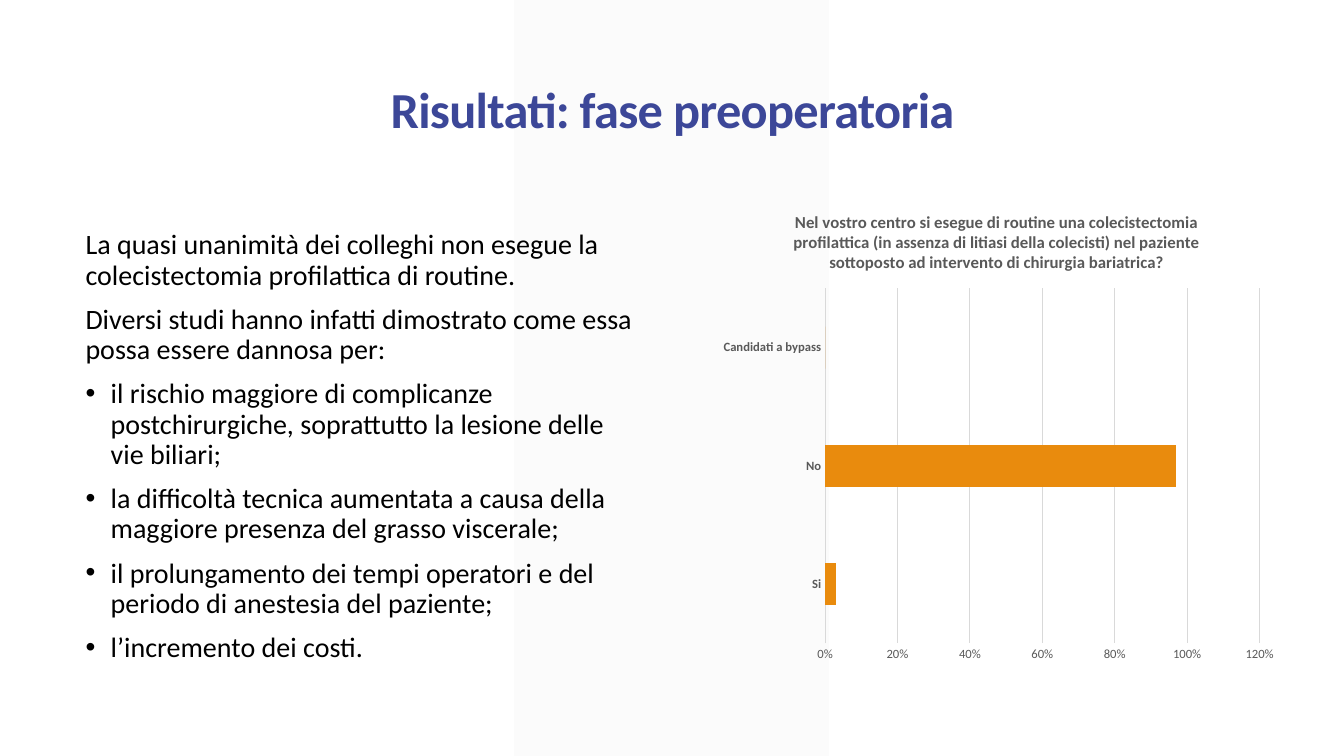
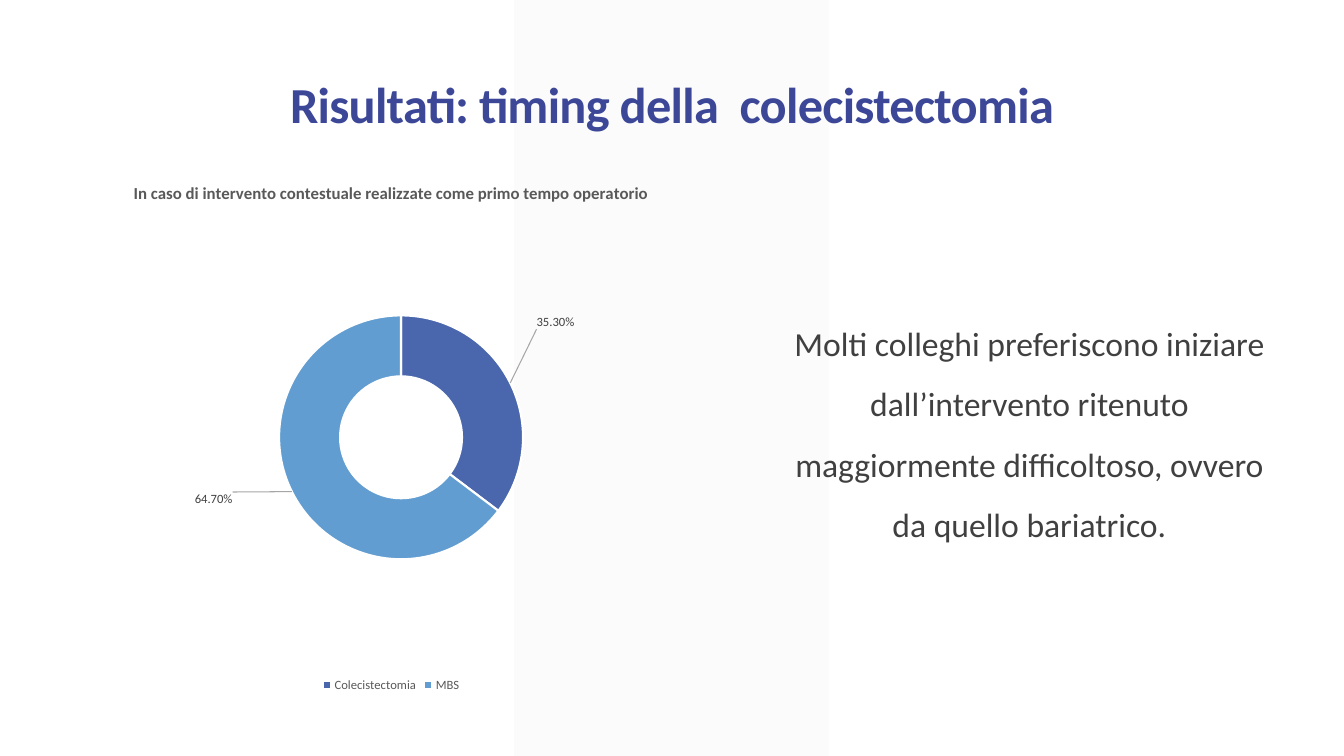
from copy import deepcopy
from dataclasses import dataclass

from lxml import etree
from pptx import Presentation
from pptx.chart.data import CategoryChartData
from pptx.dml.color import RGBColor
from pptx.enum.chart import XL_CHART_TYPE, XL_LEGEND_POSITION, XL_TICK_MARK
from pptx.enum.shapes import MSO_SHAPE
from pptx.enum.text import MSO_ANCHOR, PP_ALIGN
from pptx.oxml.ns import qn
from pptx.util import Inches, Pt

BAR, DOUGHNUT = XL_CHART_TYPE.BAR_CLUSTERED, XL_CHART_TYPE.DOUGHNUT
NO_TICK = XL_TICK_MARK.NONE
LEGEND_BOTTOM = XL_LEGEND_POSITION.BOTTOM
PARALLELOGRAM = MSO_SHAPE.PARALLELOGRAM
TOP, MIDDLE, BOTTOM = MSO_ANCHOR.TOP, MSO_ANCHOR.MIDDLE, MSO_ANCHOR.BOTTOM
LEFT, CENTER = PP_ALIGN.LEFT, PP_ALIGN.CENTER

FONT = "Calibri"
TITLE_BLUE, BLACK, DARK_GREY, MID_GREY = "3C4798", "000000", "404040", "595959"
GRID_GREY, LEADER_GREY, BAND_GREY, WHITE = "D9D9D9", "A6A6A6", "F2F2F2", "FFFFFF"
ORANGE, BLUE, LIGHT_BLUE = "E98B0D", "4A66AC", "629DD1"


@dataclass
class Box:
    left: float
    top: float
    width: float
    height: float

    def inches(self) -> tuple:
        return tuple(Inches(v) for v in (self.left, self.top, self.width, self.height))


@dataclass
class TextStyle:
    size: float
    color: str
    bold: bool = False
    align: PP_ALIGN = LEFT
    anchor: MSO_ANCHOR = TOP
    line_spacing: float = 0.9
    space_before: float = 0
    tracking: float = 0


@dataclass
class Line:
    text: str
    bullet: bool = False


@dataclass
class ChartSpec:
    kind: XL_CHART_TYPE
    box: Box
    title: str
    values: dict
    plot: Box  # fractions of the chart area


def rgb(hex_color: str) -> RGBColor:
    return RGBColor.from_string(hex_color)


def style_font(font, size: float, color: str, bold: bool = False) -> None:
    font.name, font.size, font.bold = FONT, Pt(size), bold
    font.color.rgb = rgb(color)


def sub(parent, tag: str, **attributes: str):
    return etree.SubElement(parent, qn(tag), attributes)


def add_text(slide, box: Box, lines: list[Line], style: TextStyle) -> None:
    frame = slide.shapes.add_textbox(*box.inches()).text_frame
    frame.word_wrap = True
    frame.vertical_anchor = style.anchor
    for i, line in enumerate(lines):
        paragraph = frame.add_paragraph() if i else frame.paragraphs[0]
        paragraph.text = line.text
        paragraph.alignment = style.align
        paragraph.line_spacing = style.line_spacing
        if i:
            paragraph.space_before = Pt(style.space_before)
        if line.bullet:
            properties = paragraph._p.get_or_add_pPr()
            properties.set("marL", str(Inches(0.25)))
            properties.set("indent", str(-Inches(0.25)))
            sub(properties, "a:buFont", typeface="Arial")
            sub(properties, "a:buChar", char="•")
        for run in paragraph.runs:
            style_font(run.font, style.size, style.color, style.bold)
            if style.tracking:
                run._r.get_or_add_rPr().set("spc", str(int(style.tracking * 100)))


def add_slide(deck, title: str, title_box: Box, anchor: MSO_ANCHOR):
    """Blank slide with the pale vertical band and the title."""
    slide = deck.slides.add_slide(deck.slide_layouts[6])
    band = slide.shapes.add_shape(PARALLELOGRAM, *Box(5.1, 0, 3.12, 7.5).inches())
    band.adjustments[0] = 0
    band.shadow.inherit = False
    band.fill.solid()
    band.fill.fore_color.rgb = rgb(BAND_GREY)
    band.line.fill.background()
    sub(band._element.spPr.find(f".//{qn('a:srgbClr')}"), "a:alpha", val="30000")
    add_text(slide, title_box, [Line(title)],
             TextStyle(36, TITLE_BLUE, True, CENTER, anchor, tracking=-0.5))
    return slide


def set_layout(layout, mode_tags: dict, **numbers: float) -> None:
    manual = sub(layout, "c:manualLayout")
    for tag, value in mode_tags.items():
        sub(manual, f"c:{tag}", val=value)
    for tag, value in numbers.items():
        sub(manual, f"c:{tag}", val=str(value))


def add_chart(slide, spec: ChartSpec):
    data = CategoryChartData()
    data.categories = list(spec.values)
    data.add_series("Series 1", list(spec.values.values()))
    chart = slide.shapes.add_chart(spec.kind, *spec.box.inches(), data).chart
    style_font(chart.font, 10, BLACK)
    chart.has_legend = False
    # Title
    chart.has_title = True
    chart.chart_title.include_in_layout = False
    heading = chart.chart_title.text_frame
    heading.text = spec.title
    style_font(heading.paragraphs[0].runs[0].font, 12, MID_GREY, True)
    # Plot area position
    area = chart._chartSpace.find(f".//{qn('c:plotArea')}")
    layout = area.find(qn("c:layout"))
    if layout is None:
        layout = etree.Element(qn("c:layout"))
        area.insert(0, layout)
    set_layout(layout, {"layoutTarget": "inner", "xMode": "edge", "yMode": "edge"},
               x=spec.plot.left, y=spec.plot.top, w=spec.plot.width, h=spec.plot.height)
    return chart


def style_bars(chart) -> None:
    plot = chart.plots[0]
    plot.gap_width = 182
    plot.vary_by_categories = False
    fill = plot.series[0].format.fill
    fill.solid()
    fill.fore_color.rgb = rgb(ORANGE)
    categories, values = chart.category_axis, chart.value_axis
    for axis in (categories, values):
        axis.major_tick_mark = axis.minor_tick_mark = NO_TICK
        style_font(axis.tick_labels.font, 9, MID_GREY, axis is categories)
    categories.has_major_gridlines = False
    values.has_major_gridlines = True
    for line in (categories.format.line, values.major_gridlines.format.line):
        line.color.rgb = rgb(GRID_GREY)
        line.width = Pt(0.75)
    values.format.line.fill.background()
    values.minimum_scale, values.maximum_scale, values.major_unit = 0, 1.2, 0.2
    values.tick_labels.number_format = "0%"
    values.tick_labels.number_format_is_linked = False


def style_ring(chart, colors: list[str], label_shifts: list[tuple]) -> None:
    plot = chart.plots[0]
    plot.vary_by_categories = True
    plot._element.find(qn("c:holeSize")).set("val", "75")
    series = plot.series[0]
    for i, color in enumerate(colors):
        slice_format = series.points[i].format
        slice_format.fill.solid()
        slice_format.fill.fore_color.rgb = rgb(color)
        slice_format.line.color.rgb = rgb(WHITE)
        slice_format.line.width = Pt(1.5)
    # Legend
    chart.has_legend = True
    chart.legend.position = LEGEND_BOTTOM
    chart.legend.include_in_layout = False
    style_font(chart.legend.font, 9, MID_GREY)
    # Value labels, moved outside the ring
    labels = series.data_labels
    labels.show_value = True
    labels.show_percentage = False
    labels.number_format = "0.00%"
    labels.number_format_is_linked = False
    style_font(labels.font, 9, DARK_GREY)
    root = labels._element
    for old in root.findall(qn("c:showLeaderLines")):
        root.remove(old)
    shared = list(root)
    for i, (x, y) in enumerate(label_shifts):
        label = etree.Element(qn("c:dLbl"))
        sub(label, "c:idx", val=str(i))
        set_layout(sub(label, "c:layout"), {}, x=x, y=y)
        label.extend(deepcopy(part) for part in shared)
        root.insert(i, label)
    # Leader lines
    sub(root, "c:showLeaderLines", val="1")
    shape = sub(sub(root, "c:leaderLines"), "c:spPr")
    stroke = sub(shape, "a:ln", w=str(Pt(0.75)))
    sub(sub(stroke, "a:solidFill"), "a:srgbClr", val=LEADER_GREY)


def build_preoperative(deck) -> None:
    slide = add_slide(deck, "Risultati: fase preoperatoria",
                      Box(1.44, 0.32, 10.46, 1.59), MIDDLE)
    style_bars(add_chart(slide, ChartSpec(
        BAR, Box(7.05, 1.91, 5.67, 4.76),
        "Nel vostro centro si esegue di routine una colecistectomia profilattica "
        "(in assenza di litiasi della colecisti) nel paziente sottoposto ad "
        "intervento di chirurgia bariatrica?",
        {"Si": 0.03, "No": 0.97, "Candidati a bypass": 0},
        Box(0.2, 0.2, 0.76, 0.74))))
    add_text(slide, Box(0.75, 2.24, 5.67, 4.76), [
        Line("La quasi unanimità dei colleghi non esegue la colecistectomia "
             "profilattica di routine."),
        Line("Diversi studi hanno infatti dimostrato come essa possa essere dannosa per:"),
        Line("il rischio maggiore di complicanze postchirurgiche, soprattutto la "
             "lesione delle vie biliari;", True),
        Line("la difficoltà tecnica aumentata a causa della maggiore presenza del "
             "grasso viscerale;", True),
        Line("il prolungamento dei tempi operatori e del periodo di anestesia del "
             "paziente;", True),
        Line("l’incremento dei costi.", True),
    ], TextStyle(20, BLACK, space_before=10))


def build_timing(deck) -> None:
    slide = add_slide(deck, "Risultati: timing della  colecistectomia",
                      Box(1.29, 0.59, 10.75, 0.79), BOTTOM)
    ring = add_chart(slide, ChartSpec(
        DOUGHNUT, Box(0.61, 1.61, 6.54, 5.3),
        "In caso di intervento contestuale realizzate come primo tempo operatorio",
        {"Colecistectomia": 0.353, "MBS": 0.647},
        Box(0.33, 0.21, 0.37, 0.61)))
    style_ring(ring, [BLUE, LIGHT_BLUE], [(0.11, -0.14), (-0.16, 0.04)])
    add_text(slide, Box(7.7, 2.95, 5.02, 2.63), [
        Line("Molti colleghi preferiscono iniziare dall’intervento ritenuto "
             "maggiormente difficoltoso, ovvero da quello bariatrico."),
    ], TextStyle(24, DARK_GREY, align=CENTER, line_spacing=1.5))


def main() -> None:
    deck = Presentation()
    deck.slide_width, deck.slide_height = Inches(13.33), Inches(7.5)
    build_preoperative(deck)
    build_timing(deck)
    deck.save("out.pptx")


if __name__ == "__main__":
    main()
